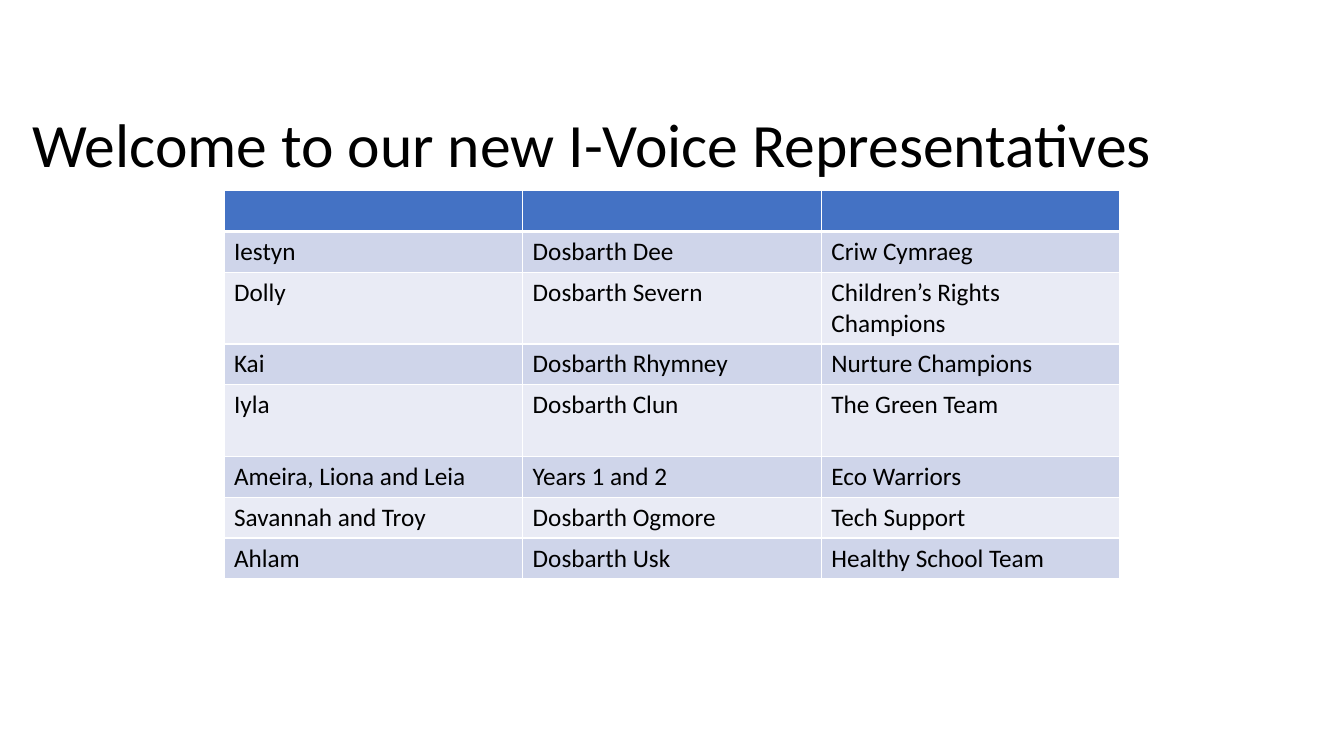
from lxml import etree
from pptx import Presentation
from pptx.dml.color import RGBColor
from pptx.enum.text import MSO_ANCHOR, MSO_AUTO_SIZE, PP_ALIGN
from pptx.oxml.ns import qn
from pptx.util import Inches, Pt

MIDDLE = MSO_ANCHOR.MIDDLE
NO_FIT = MSO_AUTO_SIZE.NONE
LEFT = PP_ALIGN.LEFT

BLACK = RGBColor(0x00, 0x00, 0x00)
WHITE = RGBColor(0xFF, 0xFF, 0xFF)
BLUE = RGBColor(0x44, 0x72, 0xC4)
BANDS = (RGBColor(0xCF, 0xD5, 0xEA), RGBColor(0xE9, 0xEB, 0xF5))

FONT = "Calibri"
WIDE, HIGH = Inches(13.33), Inches(7.5)
COL = WIDE / 4.5
ROW, TALL = Inches(0.4), Inches(0.71)
TALL_ROWS = (2, 4)

TEAMS = [
    ("", "", ""),
    ("Iestyn", "Dosbarth Dee", "Criw Cymraeg"),
    ("Dolly", "Dosbarth Severn", "Children’s Rights Champions"),
    ("Kai", "Dosbarth Rhymney", "Nurture Champions"),
    ("Iyla", "Dosbarth Clun", "The Green Team"),
    ("Ameira, Liona and Leia", "Years 1 and 2", "Eco Warriors"),
    ("Savannah and Troy", "Dosbarth Ogmore", "Tech Support"),
    ("Ahlam", "Dosbarth Usk", "Healthy School Team"),
]


def add_run(para, text, size):
    run = para.add_run()
    run.text = text
    run.font.name = FONT
    run.font.size = Pt(size)
    run.font.color.rgb = BLACK


def add_title(slide, text):
    title = slide.shapes.title
    title.left, title.top = Inches(0.22), Inches(0.74)
    title.width, title.height = Inches(11.5), Inches(1.45)
    frame = title.text_frame
    frame.word_wrap = True
    frame.auto_size = NO_FIT
    frame.vertical_anchor = MIDDLE
    para = frame.paragraphs[0]
    para.alignment = LEFT
    para.line_spacing = 0.9
    add_run(para, text, 44)


def add_edge(cell, side, width):
    props = cell._tc.get_or_add_tcPr()
    line = etree.SubElement(props, qn(f"a:ln{side}"), w=str(Pt(width)))
    fill = etree.SubElement(line, qn("a:solidFill"))
    etree.SubElement(fill, qn("a:srgbClr"), val=str(WHITE))


def style_cell(cell, row):
    thick = {(0, "B"), (1, "T")}
    for side in "LRTB":
        add_edge(cell, side, 3 if (row, side) in thick else 1)
    cell.fill.solid()
    cell.fill.fore_color.rgb = BANDS[(row - 1) % 2] if row else BLUE


def add_grid(slide, rows):
    count = len(rows[0])
    frame = slide.shapes.add_table(
        len(rows), count, int(WIDE / 6), Inches(1.89),
        int(COL * count), ROW * len(rows))
    table = frame.table
    for col in table.columns:
        col.width = int(COL)
    for i, texts in enumerate(rows):
        table.rows[i].height = TALL if i in TALL_ROWS else ROW
        for j, text in enumerate(texts):
            cell = table.cell(i, j)
            style_cell(cell, i)
            if text:
                add_run(cell.text_frame.paragraphs[0], text, 18)


def main():
    deck = Presentation()
    deck.slide_width, deck.slide_height = WIDE, HIGH
    slide = deck.slides.add_slide(deck.slide_layouts[5])
    add_title(slide, "Welcome to our new I-Voice Representatives")
    add_grid(slide, TEAMS)
    deck.save("out.pptx")


if __name__ == "__main__":
    main()
